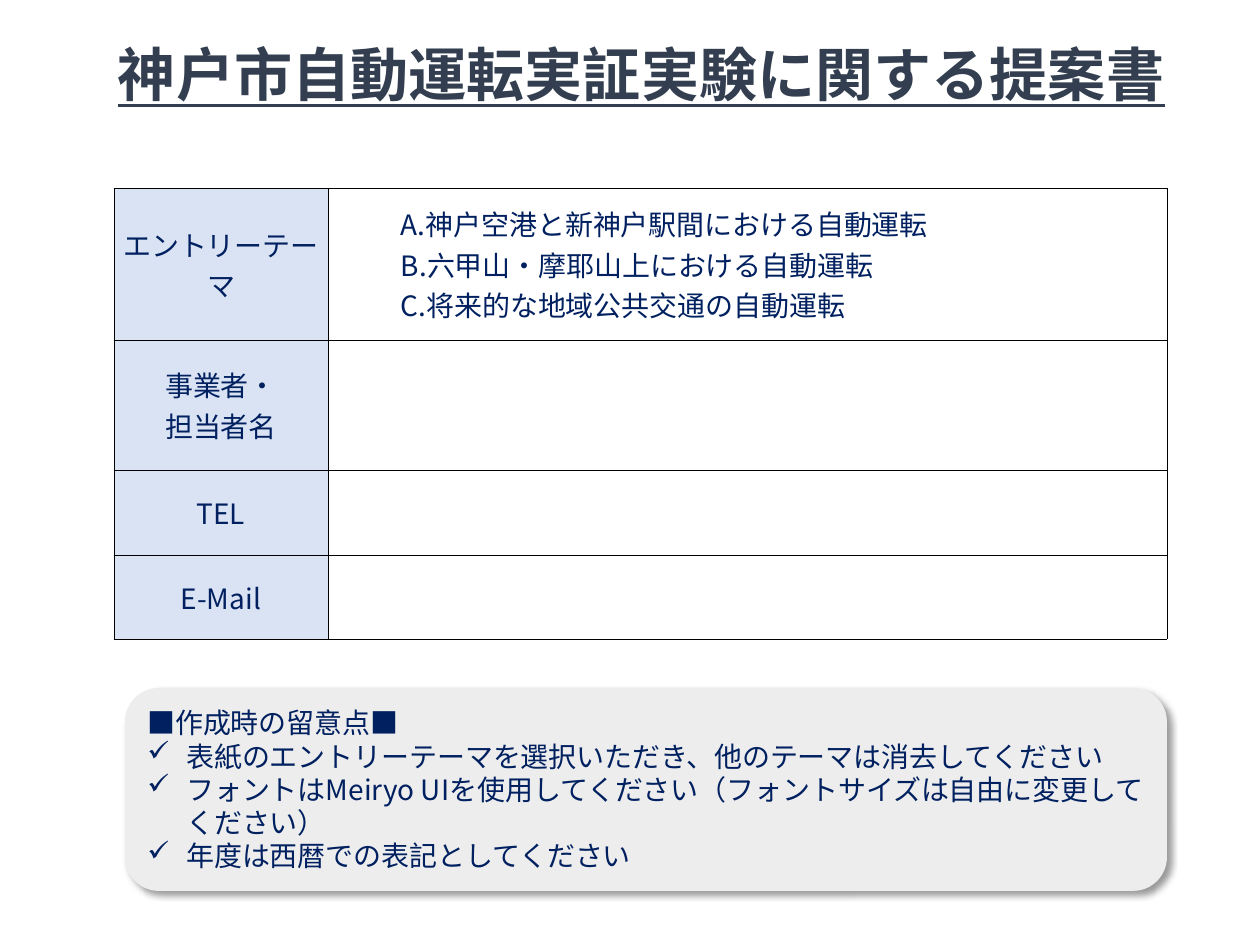
from dataclasses import dataclass

from lxml.etree import SubElement
from pptx import Presentation
from pptx.dml.color import RGBColor
from pptx.enum.shapes import MSO_SHAPE as Preset
from pptx.enum.text import MSO_ANCHOR as Anchor, MSO_AUTO_SIZE as AutoSize, PP_ALIGN as Align
from pptx.oxml import parse_xml
from pptx.oxml.ns import nsdecls, qn
from pptx.util import Emu, Pt


@dataclass(frozen=True)
class Theme:
    font: str = "Noto Sans CJK JP"
    title: str = "333F50"
    text: str = "002060"
    label_fill: str = "DAE3F3"
    cell_fill: str = "FFFFFF"
    note_fill: str = "EDEDED"
    border: str = "000000"
    title_size: float = 33.2
    body_size: float = 16
    note_pitch: float = 19
    border_width: float = 0.25


@dataclass(frozen=True)
class Line:
    text: str
    align: Align = Align.LEFT
    indent: int = 0
    bullet: str = ""


@dataclass(frozen=True)
class Row:
    height: int
    label: tuple[str, ...]
    choices: tuple[str, ...] = ()


THEME = Theme()
PX_PER_INCH = 126
TITLE = "神戸市自動運転実証実験に関する提案書"
COLUMNS = (214, 839)
CHOICE_INDENT = 64
BULLET_INDENT = 39

ROWS = (
    Row(152, ("エントリーテーマ",), (
        "A.神戸空港と新神戸駅間における自動運転",
        "B.六甲山・摩耶山上における自動運転",
        "C.将来的な地域公共交通の自動運転",
    )),
    Row(130, ("事業者・", "担当者名")),
    Row(85, ("TEL",)),
    Row(84, ("E-Mail",)),
)

NOTE_HEADING = "■作成時の留意点■"
NOTES = (
    "表紙のエントリーテーマを選択いただき、他のテーマは消去してください",
    "フォントはMeiryo UIを使用してください（フォントサイズは自由に変更してください）",
    "年度は西暦での表記としてください",
)


def px(length: int) -> Emu:
    return Emu(round(length * 914400 / PX_PER_INCH))


def apply(target, values: dict) -> None:
    for name, value in values.items():
        setattr(target, name, value)


def paint(fill, color: str) -> None:
    fill.solid()
    fill.fore_color.rgb = RGBColor.from_string(color)


def write(frame, lines: list[Line], color: str, size: float, spacing=None, **font_values) -> None:
    """Fill a text frame with one paragraph per line."""
    for number, line in enumerate(lines):
        paragraph = frame.add_paragraph() if number else frame.paragraphs[0]
        apply(paragraph, {"alignment": line.align, "line_spacing": spacing})
        properties = paragraph._p.get_or_add_pPr()
        if line.indent:
            properties.set("marL", str(px(line.indent)))
        if line.bullet:
            properties.set("indent", str(-px(line.indent)))
            SubElement(properties, qn("a:buChar"), char=line.bullet)
        run = paragraph.add_run()
        run.text = line.text
        apply(run.font, {"name": THEME.font, "size": Pt(size), **font_values})
        run.font.color.rgb = RGBColor.from_string(color)
        SubElement(run._r.get_or_add_rPr(), qn("a:ea"), typeface=THEME.font)


def add_title(slide) -> None:
    box = slide.shapes.add_textbox(px(96), px(40), px(1091), px(83))
    apply(box.text_frame, {"word_wrap": True, "auto_size": AutoSize.NONE})
    write(box.text_frame, [Line(TITLE, Align.CENTER)], THEME.title, THEME.title_size,
          spacing=0.9, bold=True, underline=True)


def format_cell(cell, color: str) -> None:
    """Set margins, borders and fill; the borders must precede the fill."""
    apply(cell, {
        "vertical_anchor": Anchor.MIDDLE,
        "margin_left": px(9), "margin_right": px(9),
        "margin_top": 0, "margin_bottom": 0,
    })
    properties = cell._tc.get_or_add_tcPr()
    for side in ("lnL", "lnR", "lnT", "lnB"):
        properties.append(parse_xml(
            f'<a:{side} {nsdecls("a")} w="{Pt(THEME.border_width)}"><a:solidFill>'
            f'<a:srgbClr val="{THEME.border}"/></a:solidFill></a:{side}>'))
    paint(cell.fill, color)


def add_entry_table(slide) -> None:
    height = sum(row.height for row in ROWS)
    frame = slide.shapes.add_table(len(ROWS), len(COLUMNS), px(114), px(188),
                                   px(sum(COLUMNS)), px(height))
    table = frame.table
    apply(table, {"first_row": False, "horz_banding": False})
    for column, width in zip(table.columns, COLUMNS):
        column.width = px(width)
    for number, row in enumerate(ROWS):
        table.rows[number].height = px(row.height)
        label, answer = table.cell(number, 0), table.cell(number, 1)
        format_cell(label, THEME.label_fill)
        format_cell(answer, THEME.cell_fill)
        write(label.text_frame, [Line(text, Align.CENTER) for text in row.label],
              THEME.text, THEME.body_size)
        write(answer.text_frame, [Line(text, indent=CHOICE_INDENT) for text in row.choices],
              THEME.text, THEME.body_size)


def add_notes_box(slide) -> None:
    shape = slide.shapes.add_shape(Preset.ROUNDED_RECTANGLE, px(125), px(688), px(1042), px(203))
    paint(shape.fill, THEME.note_fill)
    shape.line.fill.background()
    # Soft shadow to the lower right
    shape._element.spPr.append(parse_xml(
        f'<a:effectLst {nsdecls("a")}><a:outerShdw blurRad="{Pt(4)}" dist="{Pt(3)}" '
        'dir="2700000" algn="tl" rotWithShape="0"><a:srgbClr val="000000">'
        '<a:alpha val="40000"/></a:srgbClr></a:outerShdw></a:effectLst>'))
    apply(shape.text_frame, {"word_wrap": True, "vertical_anchor": Anchor.MIDDLE})
    lines = [Line(NOTE_HEADING)]
    lines += [Line(text, indent=BULLET_INDENT, bullet="✓") for text in NOTES]
    write(shape.text_frame, lines, THEME.text, THEME.body_size, spacing=Pt(THEME.note_pitch))


def main() -> None:
    presentation = Presentation()
    apply(presentation, {"slide_width": px(1260), "slide_height": px(945)})
    slide = presentation.slides.add_slide(presentation.slide_layouts[6])
    add_title(slide)
    add_entry_table(slide)
    add_notes_box(slide)
    presentation.save("out.pptx")


if __name__ == "__main__":
    main()
